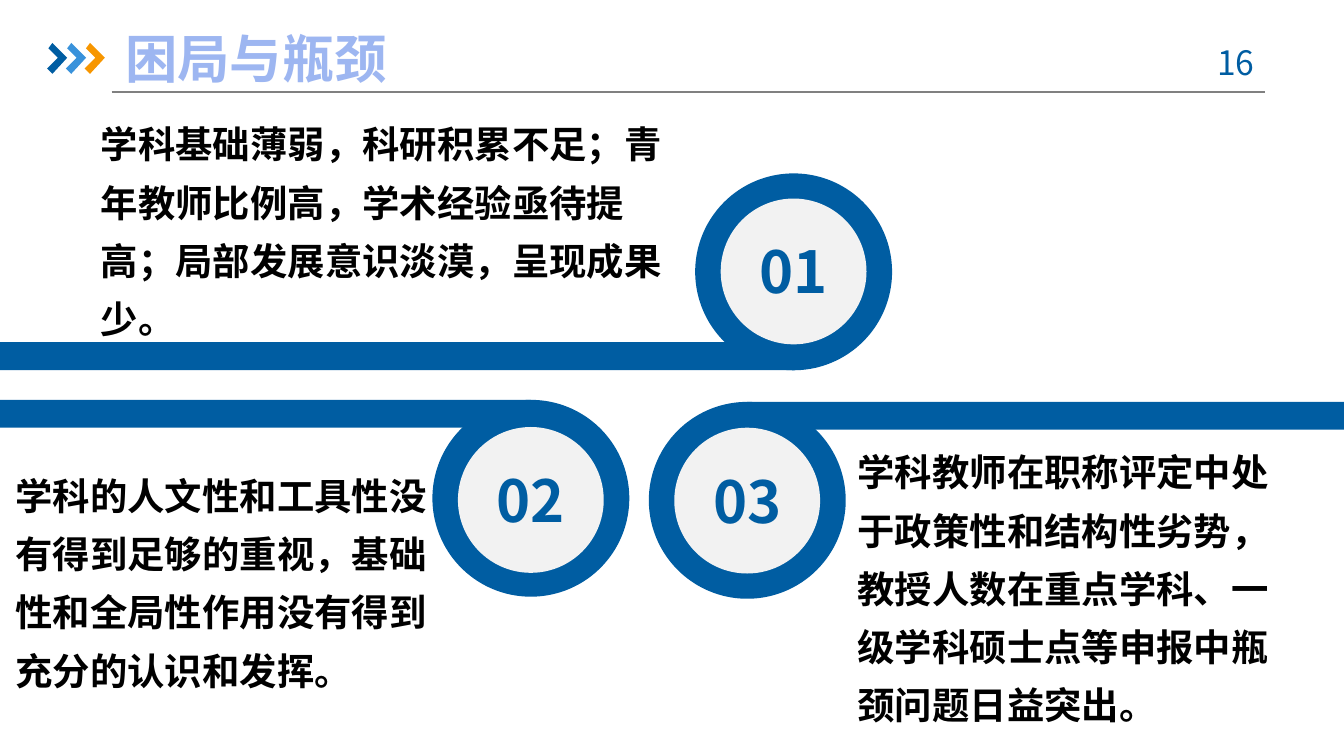
from lxml import etree
from pptx import Presentation
from pptx.dml.color import RGBColor
from pptx.enum.shapes import MSO_CONNECTOR, MSO_SHAPE
from pptx.enum.text import MSO_ANCHOR, PP_ALIGN
from pptx.oxml.ns import qn
from pptx.util import Inches, Pt

STRAIGHT = MSO_CONNECTOR.STRAIGHT
RECTANGLE, OVAL = MSO_SHAPE.RECTANGLE, MSO_SHAPE.OVAL
TOP, MIDDLE = MSO_ANCHOR.TOP, MSO_ANCHOR.MIDDLE
LEFT, CENTER = PP_ALIGN.LEFT, PP_ALIGN.CENTER

BLUE = RGBColor(0x00, 0x5D, 0xA2)
SKY = RGBColor(0x39, 0x92, 0xDB)
ORANGE = RGBColor(0xF7, 0x96, 0x00)
PERIWINKLE = RGBColor(0x9D, 0xB6, 0xF1)
PALE = RGBColor(0xF2, 0xF2, 0xF2)
GREY = RGBColor(0x80, 0x80, 0x80)
BLACK = RGBColor(0x00, 0x00, 0x00)
CJK = "Noto Sans CJK SC"

# A 16:9 slide
deck = Presentation()
deck.slide_width = Inches(10)
deck.slide_height = deck.slide_width * 9 // 16
slide = deck.slides.add_slide(deck.slide_layouts[6])
shapes = slide.shapes

# Square grid: 100 columns across the slide, rows of the same size
CELL = deck.slide_width // 100


def paint(shape, color):
    shape.shadow.inherit = False
    shape.fill.solid()
    shape.fill.fore_color.rgb = color
    shape.line.fill.background()


def write(shape, text, size, color, bold=True, latin=CJK, align=LEFT,
          anchor=TOP, spacing=None, insets=(0.08, 0.04, 0.08, 0.04)):
    frame = shape.text_frame
    left, top, right, bottom = map(Inches, insets)
    frame_format = {"word_wrap": True, "vertical_anchor": anchor,
                    "margin_left": left, "margin_top": top,
                    "margin_right": right, "margin_bottom": bottom}
    paragraph = frame.paragraphs[0]
    paragraph.alignment, paragraph.line_spacing = align, spacing
    # Punctuation stays inside the right margin
    paragraph._p.get_or_add_pPr().set("hangingPunct", "0")
    run = paragraph.add_run()
    run.text = text
    font_format = {"size": Pt(size), "bold": bold, "name": latin}
    for target, values in ((frame, frame_format), (run.font, font_format)):
        for name, value in values.items():
            setattr(target, name, value)
    run.font.color.rgb = color
    # East Asian typeface follows the latin one
    east_asian = etree.Element(qn("a:ea"), typeface=CJK)
    run.font._element.find(qn("a:latin")).addnext(east_asian)


# Header rule
rule = shapes.add_connector(STRAIGHT, *(round(n * CELL) for n in (8.3, 6.85, 94.1, 6.85)))
rule.line.color.rgb = GREY
rule.line.width = Pt(0.75)
etree.SubElement(rule._element.spPr, qn("a:effectLst"))

# Three chevrons at equal steps, in hundredths of an inch
CHEVRON = [(1, 4), (4, 0), (15, 11), (4, 23), (0, 19), (8, 11)]
for step, color in enumerate((BLUE, SKY, ORANGE)):
    points = [(35 + 14 * step + x, 32 + y) for x, y in CHEVRON]
    outline = shapes.build_freeform(*points[0], scale=CELL / 10)
    outline.add_line_segments(points[1:], close=True)
    paint(outline.convert_to_shape(), color)

# Page number and title
page = shapes.add_textbox(*(round(n * CELL) for n in (88.6, 2.6, 7.3, 4)))
write(page, "16 ", 18, BLUE, bold=False, align=CENTER, insets=(0.1, 0.05, 0.1, 0.05))
title = shapes.add_textbox(*(round(n * CELL) for n in (9.35, 2.2, 68.3, 4.1)))
write(title, "困局与瓶颈", 28, PERIWINKLE, anchor=MIDDLE, insets=(0, 0.05, 0, 0.05))

# Numbered rings, each with a band running from its centre to a slide edge
RING, DISC, BAND = 14.65, 10.85, 2.08
rings = [  # number, centre column, ring top, disc middle, band top, slide edge
    ("02", 39.5, 29.75, 37.2, 29.75, 0),
    ("01", 59.05, 12.9, 20.2, 12.9 + RING - BAND, 0),
    ("03", 55.6, 29.9, 37.25, 29.9, 100),
]
for number, center, ring_top, disc_middle, band_top, edge in rings:
    parts = [(RECTANGLE, min(center, edge), band_top, abs(center - edge), BAND, BLUE)]
    for diameter, middle, color in ((RING, ring_top + RING / 2, BLUE),
                                    (DISC, disc_middle, PALE)):
        parts.append((OVAL, center - diameter / 2, middle - diameter / 2,
                      diameter, diameter, color))
    for kind, *box, color in parts:
        part = shapes.add_shape(kind, *(round(n * CELL) for n in box))
        paint(part, color)
    # The disc comes last and carries the number
    write(part, number, 31, BLUE, align=CENTER, anchor=MIDDLE,
          insets=(0.1, 0.04, 0.1, 0.05))

# Explanations beside the rings
explanations = [
    ((6.7, 7.65, 44.9, 13.5), "Calibri",
     "学科基础薄弱，科研积累不足；青年教师比例高，学术经验亟待提高；局部发展意识淡漠，呈现成果少。"),
    ((0.35, 33.8, 32.5, 18.3), "Arial",
     "学科的人文性和工具性没有得到足够的重视，基础性和全局性作用没有得到充分的认识和发挥。"),
    ((63, 32.05, 32.9, 22.7), "Arial",
     "学科教师在职称评定中处于政策性和结构性劣势，教授人数在重点学科、一级学科硕士点等申报中瓶颈问题日益突出。"),
]
for box, latin, text in explanations:
    explanation = shapes.add_textbox(*(round(n * CELL) for n in box))
    write(explanation, text, 20, BLACK, latin=latin, spacing=1.3)

deck.save("out.pptx")
